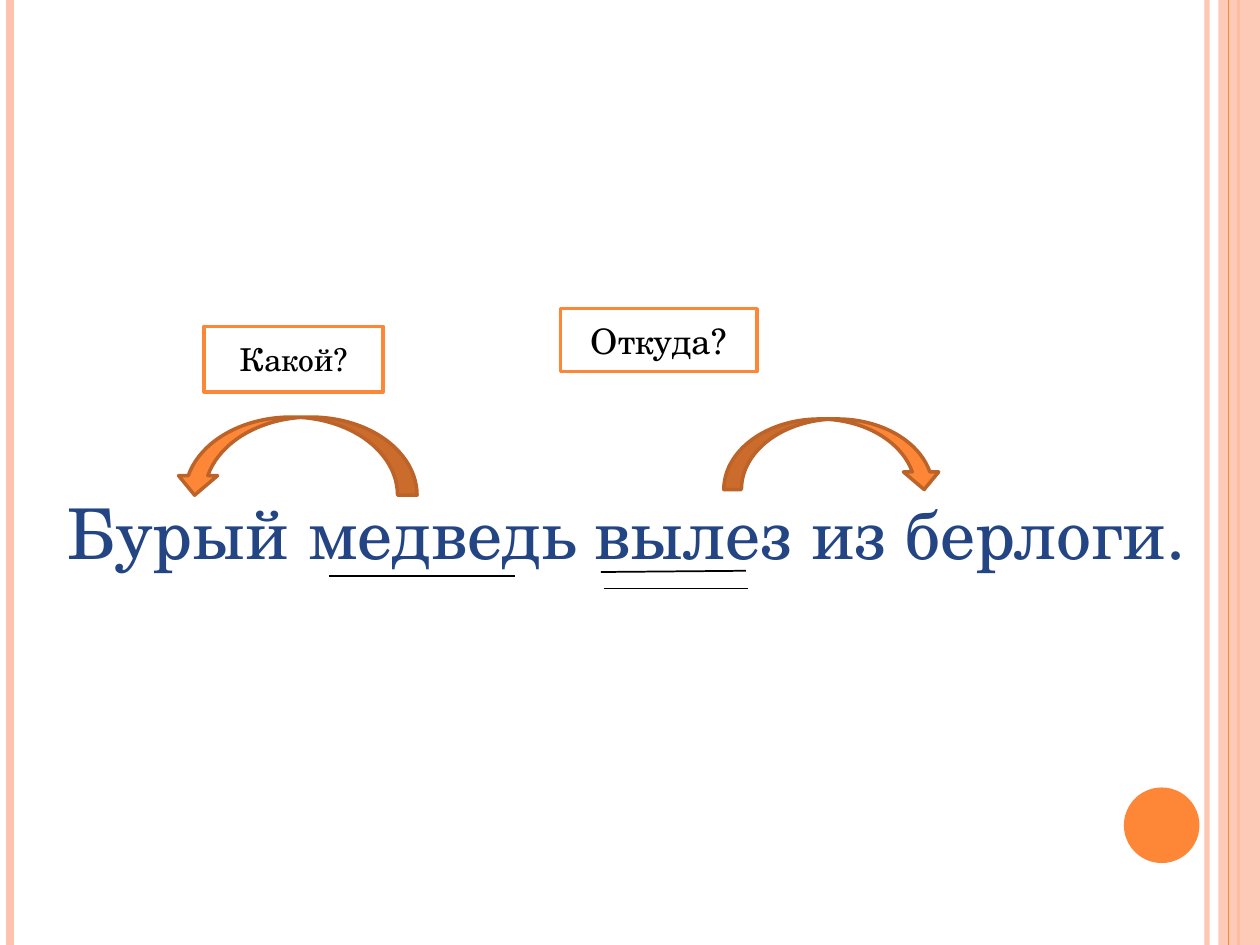
from dataclasses import dataclass

from lxml import etree
from pptx import Presentation
from pptx import util as u
from pptx.dml.color import RGBColor
from pptx.enum import shapes, text
from pptx.oxml.ns import qn


@dataclass(frozen=True)
class Theme:
    font: str = "TeX Gyre Schola"
    orange: str = "FE8637"
    dark_orange: str = "BC6329"
    peach: str = "FEC3AE"
    blue: str = "244583"
    black: str = "000000"
    white: str = "FFFFFF"
    title: int = 40
    question: int = 20
    small_question: int = 18
    outline: float = 2
    underline: float = 1


class Slide:
    """Draws on one slide with a grid of 100 columns by 75 rows."""

    COLS, ROWS = 100, 75

    def __init__(self, prs, theme):
        self.theme = theme
        self.s = prs.slides.add_slide(prs.slide_layouts[6])
        self.col = prs.slide_width / self.COLS
        self.row = prs.slide_height / self.ROWS

    def grid(self, *lengths):
        """Turn alternating columns and rows into slide lengths."""
        units = (self.col, self.row) * 2
        return [u.Emu(round(n * unit)) for n, unit in zip(lengths, units)]

    def paint(self, fmt, color, opacity=100):
        fmt.solid()
        fmt.fore_color.rgb = RGBColor.from_string(color)
        if opacity < 100:
            clr = fmt._xPr.find(qn("a:solidFill"))[0]
            etree.SubElement(clr, qn("a:alpha"), val=str(opacity * 1000))

    def line(self, x1, y1, x2, y2, color, width, opacity=100):
        ln = self.s.shapes.add_connector(
            shapes.MSO_CONNECTOR.STRAIGHT, *self.grid(x1, y1, x2, y2))
        ln.line.width = u.Pt(width)
        self.paint(ln.line.fill, color, opacity)
        etree.SubElement(ln._element.spPr, qn("a:effectLst"))

    def shape(self, kind, box, fill, outline=None, opacity=100, rotation=0):
        sp = self.s.shapes.add_shape(kind, *self.grid(*box))
        sp.shadow.inherit = False
        sp.rotation = rotation
        self.paint(sp.fill, fill, opacity)
        if outline:
            self.paint(sp.line.fill, outline)
            sp.line.width = u.Pt(self.theme.outline)
        else:
            sp.line.fill.background()
        return sp

    def set_text(self, sp, words, size, color, anchor, align):
        tf = sp.text_frame
        tf.word_wrap = True
        tf.vertical_anchor = anchor
        tf.text = words
        p = tf.paragraphs[0]
        p.alignment = align
        r = p.runs[0]
        r.font.name = self.theme.font
        r.font.size = u.Pt(size)
        r.font.color.rgb = RGBColor.from_string(color)

    def sentence(self, words, box):
        sp = self.s.shapes.add_textbox(*self.grid(*box))
        self.set_text(sp, words, self.theme.title, self.theme.blue,
                      text.MSO_ANCHOR.BOTTOM, text.PP_ALIGN.LEFT)

    def question(self, words, box, size):
        t = self.theme
        sp = self.shape(shapes.MSO_SHAPE.RECTANGLE, box, t.white, t.orange)
        self.set_text(sp, words, size, t.black,
                      text.MSO_ANCHOR.MIDDLE, text.PP_ALIGN.CENTER)

    def arrow(self, kind, box, rotation):
        t = self.theme
        self.shape(kind, box, t.orange, t.dark_orange, rotation=rotation)

    def stripe(self, x, color, width, opacity=100):
        self.line(x, 0, x, self.ROWS, color, width, opacity)

    def underline(self, x1, y1, x2, y2):
        self.line(x1, y1, x2, y2, self.theme.black, self.theme.underline)


def main():
    prs = Presentation()
    prs.slide_width, prs.slide_height = u.Inches(10), u.Inches(7.5)
    t = Theme()
    s = Slide(prs, t)
    kinds = shapes.MSO_SHAPE

    # Side stripes and corner circle
    s.stripe(95.8, t.peach, 3, opacity=93)
    s.stripe(0.8, t.peach, 4.5)
    s.stripe(98.3, t.orange, 1.5)
    s.shape(kinds.RECTANGLE, (96.7, 0, 3.3, s.ROWS), t.peach, opacity=87)
    s.stripe(97.5, t.orange, 0.75)
    s.shape(kinds.OVAL, (89.2, 62.5, 6, 6), t.orange)

    # Sentence
    s.sentence("Бурый медведь вылез из берлоги.", (4.4, 17.6, 92.7, 28.4))

    # Arrows from the main words to the dependent ones
    s.arrow(kinds.CURVED_RIGHT_ARROW, (20.4, 26.6, 6.2, 19.2), 90)
    s.arrow(kinds.CURVED_LEFT_ARROW, (63.3, 27.4, 5.6, 17.3), 270)

    # Questions
    s.question("Откуда?", (44.5, 24.5, 15.6, 5), t.question)
    s.question("Какой?", (16.2, 25.9, 14.2, 5.2), t.small_question)

    # One line under the subject, two under the predicate
    s.underline(26.1, 45.7, 40.9, 45.7)
    s.underline(47.7, 45.4, 59.2, 45.3)
    s.underline(47.9, 46.7, 59.4, 46.7)

    prs.save("out.pptx")


if __name__ == "__main__":
    main()
